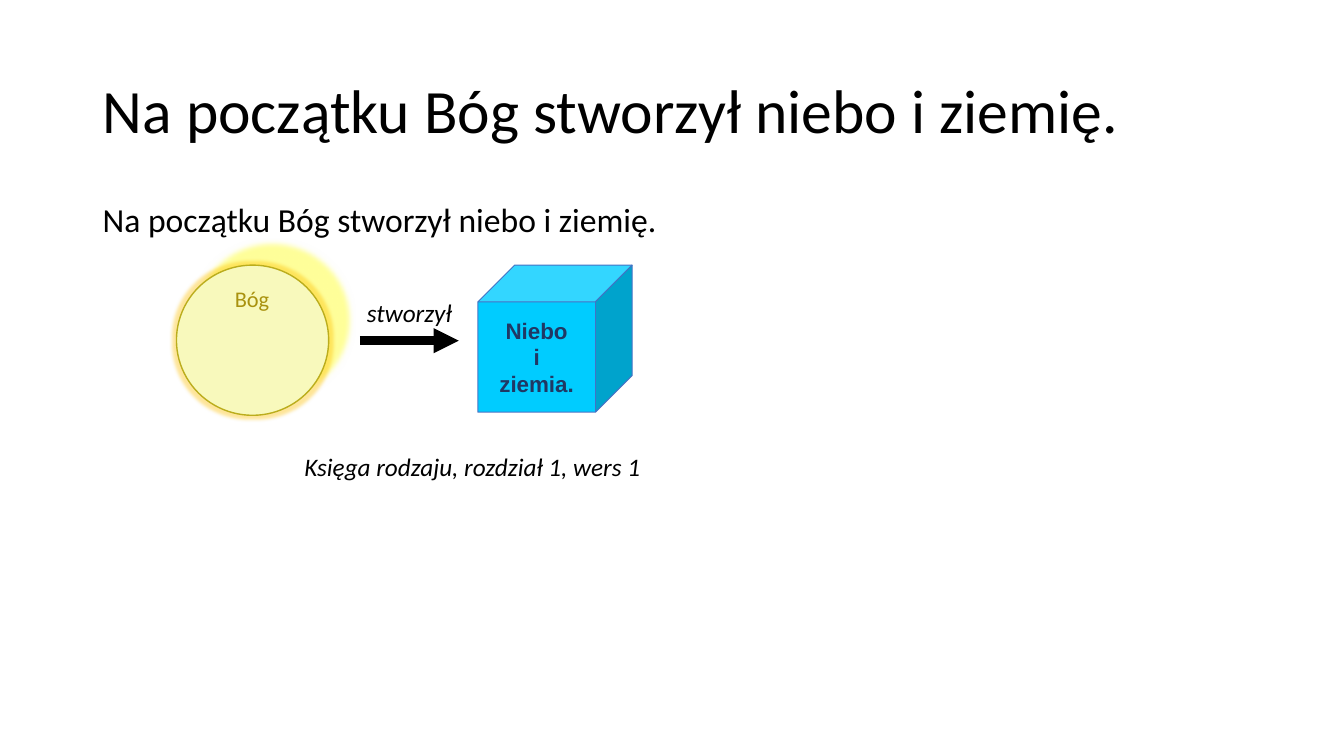
import dataclasses

import lxml.etree
import pptx
import pptx.dml.color
import pptx.enum.shapes
import pptx.enum.text
import pptx.oxml
import pptx.oxml.ns
import pptx.util

Inches = pptx.util.Inches
Pt = pptx.util.Pt
Align = pptx.enum.text.PP_ALIGN
Anchor = pptx.enum.text.MSO_ANCHOR
Preset = pptx.enum.shapes.MSO_SHAPE


@dataclasses.dataclass(frozen=True)
class Theme:
    font: str = "Calibri"
    cube_font: str = "Arial"
    text: str = "000000"
    circle_fill: str = "F8F9BC"
    circle_line: str = "BBAD1D"
    circle_text: str = "A9920F"
    circle_glow: str = "FFC000"
    circle_shadow: str = "FFFF00"
    cube_fill: str = "00CCFF"
    cube_line: str = "4472C4"
    cube_text: str = "203864"
    title_size: int = 44
    body_size: int = 24
    caption_size: int = 18
    label_size: int = 16


THEME = Theme()


def rgb(color):
    return pptx.dml.color.RGBColor.from_string(color)


def write(shape, lines, size, color=THEME.text, font=THEME.font, align=Align.LEFT,
          anchor=Anchor.TOP, wrap=True, bold=False, italic=False, spacing=1.0):
    """Fill a shape with one paragraph per line."""
    frame = shape.text_frame
    frame.auto_size = pptx.enum.text.MSO_AUTO_SIZE.NONE
    frame.word_wrap = wrap
    frame.vertical_anchor = anchor
    for index, line in enumerate(lines):
        paragraph = frame.add_paragraph() if index else frame.paragraphs[0]
        paragraph.alignment = align
        paragraph.line_spacing = spacing
        run = paragraph.add_run()
        run.text = line
        run.font.name = font
        run.font.size = Pt(size)
        run.font.bold = bold
        run.font.italic = italic
        run.font.color.rgb = rgb(color)


def add_title(slide, text, left, top, width, height):
    title = slide.shapes.title
    title.left, title.top = Inches(left), Inches(top)
    title.width, title.height = Inches(width), Inches(height)
    write(title, [text], THEME.title_size, anchor=Anchor.MIDDLE, spacing=0.9)


def add_text(slide, text, left, top, width, height, size, **style):
    box = slide.shapes.add_textbox(Inches(left), Inches(top), Inches(width), Inches(height))
    write(box, [text], size, **style)
    return box


def add_solid(slide, preset, left, top, width, height, fill, line, line_width):
    shape = slide.shapes.add_shape(preset, Inches(left), Inches(top), Inches(width), Inches(height))
    shape.shadow.inherit = False
    shape.fill.solid()
    shape.fill.fore_color.rgb = rgb(fill)
    shape.line.color.rgb = rgb(line)
    shape.line.width = Pt(line_width)
    return shape


def add_effect(shape, kind, color, opacity, **lengths):
    """Append a glow or shadow to the shape's effect list."""
    effects = shape.element.spPr.find(pptx.oxml.ns.qn("a:effectLst"))
    effect = lxml.etree.SubElement(effects, pptx.oxml.ns.qn(f"a:{kind}"))
    for name, value in lengths.items():
        effect.set(name, str(int(value)))
    tint = lxml.etree.SubElement(effect, pptx.oxml.ns.qn("a:srgbClr"), val=color)
    lxml.etree.SubElement(tint, pptx.oxml.ns.qn("a:alpha"), val=str(opacity * 1000))


def add_arrow(slide, start, end, y, color, width):
    arrow = slide.shapes.add_connector(
        pptx.enum.shapes.MSO_CONNECTOR.STRAIGHT, Inches(start), Inches(y), Inches(end), Inches(y))
    arrow.line.color.rgb = rgb(color)
    arrow.line.width = Pt(width)
    lxml.etree.SubElement(arrow.line._get_or_add_ln(), pptx.oxml.ns.qn("a:tailEnd"), type="triangle")
    lxml.etree.SubElement(arrow.element.spPr, pptx.oxml.ns.qn("a:effectLst"))


def main():
    presentation = pptx.Presentation()
    presentation.slide_width, presentation.slide_height = Inches(13.33), Inches(7.5)
    slide = presentation.slides.add_slide(presentation.slide_layouts[5])

    # Title, verse and its reference
    verse = "Na początku Bóg stworzył niebo i ziemię."
    add_title(slide, verse, 0.92, 0.4, 11.5, 1.45)
    add_text(slide, verse, 0.92, 1.97, 11.5, 0.5, THEME.body_size, spacing=0.9)
    add_text(slide, "Księga rodzaju, rozdział 1, wers 1", 2.92, 4.46, 4, 0.4,
             THEME.caption_size, italic=True, spacing=0.9)

    # Creator
    circle = add_solid(slide, Preset.OVAL, 1.75, 2.63, 1.51, 1.49,
                       THEME.circle_fill, THEME.circle_line, 1)
    add_effect(circle, "glow", THEME.circle_glow, 40, rad=Pt(5))
    add_effect(circle, "outerShdw", THEME.circle_shadow, 40,
               blurRad=Pt(4), dist=Pt(20), dir=315 * 60000)
    label = add_text(slide, "Bóg", 1.97, 2.79, 1.06, 0.35, THEME.label_size,
                     color=THEME.circle_text, align=Align.CENTER)
    label.text_frame.margin_top = label.text_frame.margin_bottom = Inches(0.04)

    # Creation
    cube = add_solid(slide, Preset.CUBE, 4.74, 2.63, 1.53, 1.46,
                     THEME.cube_fill, THEME.cube_line, 0.75)
    write(cube, ["Niebo", "i", "ziemia."], THEME.label_size, THEME.cube_text, THEME.cube_font,
          Align.CENTER, Anchor.MIDDLE, wrap=False, bold=True)

    # Action linking the two
    add_arrow(slide, 3.57, 4.55, 3.38, THEME.text, 6)
    add_text(slide, "stworzył", 3.37, 2.9, 1.38, 0.4, THEME.caption_size,
             align=Align.CENTER, italic=True)

    presentation.save("out.pptx")


if __name__ == "__main__":
    main()
